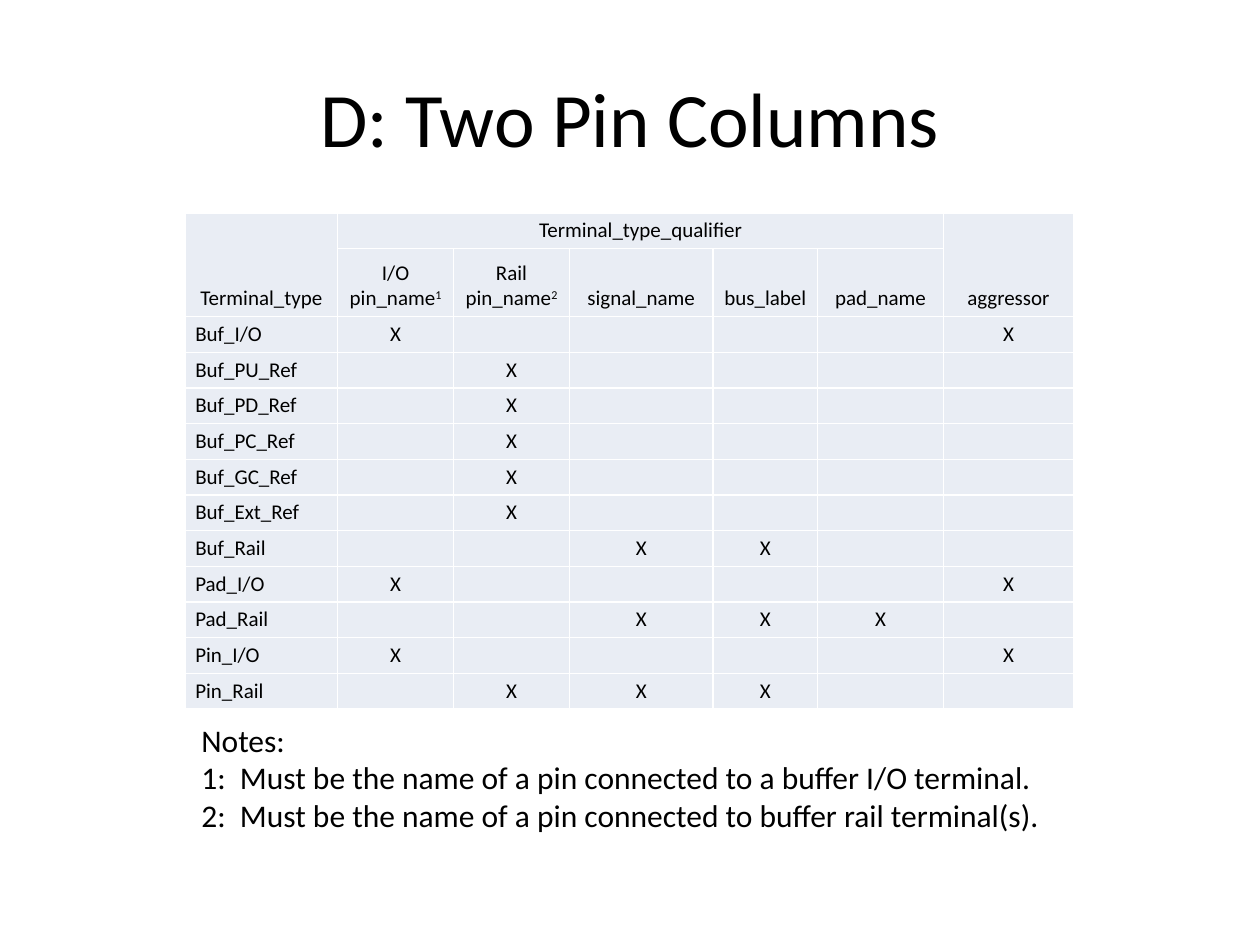
import dataclasses
import typing

import pptx
import pptx.dml.color
import pptx.enum.text
import pptx.oxml
import pptx.oxml.ns
import pptx.util
from lxml import etree

WIDE, HIGH = 10, 7.5
FONT, INK, CELL = "Calibri", "000000", "E9EDF4"
ALIGN = pptx.enum.text.PP_ALIGN
ANCHOR = pptx.enum.text.MSO_ANCHOR
inch, point = pptx.util.Inches, pptx.util.Pt


@dataclasses.dataclass
class Head:
    """A header cell: grid place, text, footnote mark and span."""
    row: int
    col: int
    text: str
    mark: str = ""
    down: int = 1
    across: int = 1


@dataclasses.dataclass
class Line:
    """A body row: its label and the columns that hold an X."""
    label: str
    marks: tuple


COLS = [1.21, 0.92, 0.92, 1.14, 0.83, 1, 1.03]
LOW, TALL = 0.28, 0.54

HEADS = [
    Head(0, 0, "Terminal_type", down=2),
    Head(0, 1, "Terminal_type_qualifier", across=5),
    Head(0, 6, "aggressor", down=2),
    Head(1, 1, "I/O\vpin_name", "1"),
    Head(1, 2, "Rail\vpin_name", "2"),
    Head(1, 3, "signal_name"),
    Head(1, 4, "bus_label"),
    Head(1, 5, "pad_name"),
]
REFS = [Line(f"Buf_{name}_Ref", (2,)) for name in ("PU", "PD", "PC", "GC", "Ext")]
LINES = [
    Line("Buf_I/O", (1, 6)),
    *REFS,
    Line("Buf_Rail", (3, 4)),
    Line("Pad_I/O", (1, 6)),
    Line("Pad_Rail", (3, 4, 5)),
    Line("Pin_I/O", (1, 6)),
    Line("Pin_Rail", (2, 3, 4)),
]
NOTES = [
    "Notes:",
    "1:  Must be the name of a pin connected to a buffer I/O terminal.",
    "2:  Must be the name of a pin connected to buffer rail terminal(s).",
]


def color(text: str) -> pptx.dml.color.RGBColor:
    return pptx.dml.color.RGBColor.from_string(text)


def apply(item: typing.Any, values: dict) -> None:
    for key, value in values.items():
        setattr(item, key, value)


def style(para: typing.Any, size: float, **values: typing.Any) -> None:
    """Format a paragraph, its runs, its line breaks and its end."""
    apply(para, values)
    for run in para.runs:
        apply(run.font, {"name": FONT, "size": point(size)})
        run.font.color.rgb = color(INK)
    name, scale = pptx.oxml.ns.qn, str(size * 100)
    for stop in para._p.findall(name("a:br")):
        etree.SubElement(stop, name("a:rPr"), sz=scale)
    etree.SubElement(para._p, name("a:endParaRPr"), sz=scale)


def write(cell: typing.Any, text: str = "", mark: str = "",
          align: typing.Any = ALIGN.CENTER, anchor: typing.Any = ANCHOR.TOP) -> None:
    """Fill a table cell with text and an optional raised mark."""
    apply(cell, {"margin_left": inch(0.08), "margin_right": inch(0.08),
                 "margin_top": inch(0.04), "margin_bottom": inch(0.04),
                 "vertical_anchor": anchor})
    cell.fill.solid()
    cell.fill.fore_color.rgb = color(CELL)
    para = cell.text_frame.paragraphs[0]
    para.text = text
    if mark:
        run = para.add_run()
        run.text = mark
        run.font._element.set("baseline", "30000")
    style(para, 12, alignment=align, space_after=point(4))


def grid(slide: typing.Any) -> None:
    rows = [LOW, TALL] + [LOW] * len(LINES)
    table = slide.shapes.add_table(
        len(rows), len(COLS), inch(1.47), inch(1.69),
        inch(sum(COLS)), inch(sum(rows))).table
    apply(table, {"first_row": False, "horz_banding": False})
    for col, width in zip(table.columns, COLS):
        col.width = inch(width)
    for row, height in zip(table.rows, rows):
        row.height = inch(height)

    # Header cells
    for head in HEADS:
        cell = table.cell(head.row, head.col)
        if head.down * head.across > 1:
            cell.merge(table.cell(head.row + head.down - 1,
                                  head.col + head.across - 1))
        anchor = ANCHOR.TOP if head.across > 1 else ANCHOR.BOTTOM
        write(cell, head.text, head.mark, anchor=anchor)

    # Body rows
    for row, line in enumerate(LINES, 2):
        write(table.cell(row, 0), line.label, align=ALIGN.LEFT)
        for col in range(1, len(COLS)):
            write(table.cell(row, col), "X" if col in line.marks else "")


def main() -> None:
    deck = pptx.Presentation()
    apply(deck, {"slide_width": inch(WIDE), "slide_height": inch(HIGH)})
    slide = deck.slides.add_slide(deck.slide_layouts[5])

    # Title
    title = slide.shapes.title
    apply(title, {"left": inch(WIDE * 0.05), "top": inch(HIGH * 0.04),
                  "width": inch(WIDE * 0.9), "height": inch(1.25)})
    title.text_frame.text = "D: Two Pin Columns"
    title.text_frame.vertical_anchor = ANCHOR.MIDDLE
    style(title.text_frame.paragraphs[0], 44, alignment=ALIGN.CENTER)

    # Table
    grid(slide)

    # Notes
    box = slide.shapes.add_textbox(inch(1.5), inch(5.67), inch(7.12), inch(1.01))
    frame = box.text_frame
    apply(frame, {"text": "\n".join(NOTES), "word_wrap": False,
                  "auto_size": pptx.enum.text.MSO_AUTO_SIZE.SHAPE_TO_FIT_TEXT})
    for para in frame.paragraphs:
        style(para, 18, alignment=ALIGN.LEFT)

    deck.save("out.pptx")


if __name__ == "__main__":
    main()
